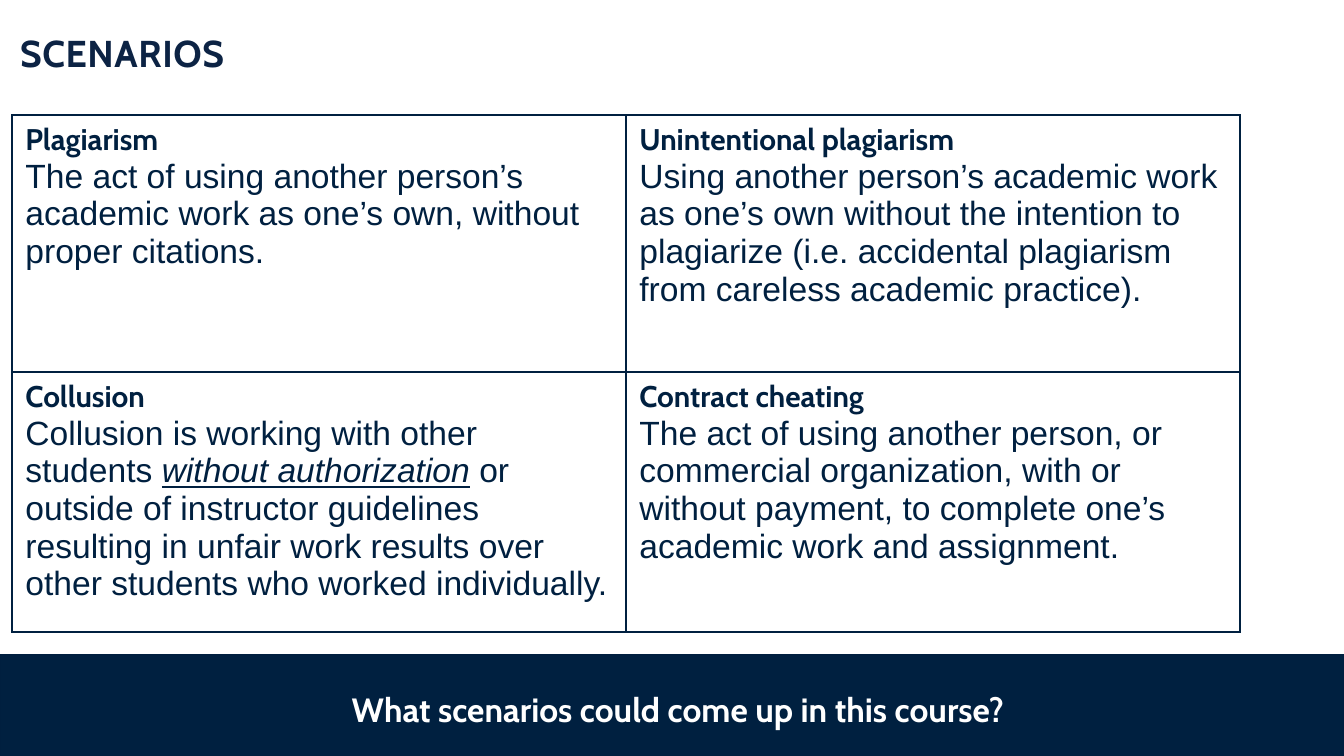
from lxml import etree
from pptx import Presentation, util as u
from pptx.dml.color import RGBColor
from pptx.enum import shapes, text
from pptx.oxml.ns import qn

COLORS = {"navy": "002040", "edge": "001F3F", "title": "0C2344", "white": "FFFFFF"}
SCALE = u.Inches(10) / 1344

SCENARIOS = [
    [
        ("Plagiarism", [("The act of using another person’s academic work as one’s own, without proper citations.", {})]),
        ("Unintentional plagiarism", [("Using another person’s academic work as one’s own without the intention to plagiarize (i.e. accidental plagiarism from careless academic practice).", {})]),
    ],
    [
        ("Collusion", [
            ("Collusion is working with other students ", {}),
            ("without authorization", {"italic": True, "underline": True}),
            (" or outside of instructor guidelines resulting in unfair work results over other students who worked individually.", {}),
        ]),
        ("Contract cheating", [("The act of using another person, or commercial organization, with or without payment, to complete one’s academic work and assignment.", {})]),
    ],
]


def px(value):
    """Turn pixels into EMU."""
    return u.Emu(round(value * SCALE))


def rgb(name):
    """Look up a named colour."""
    return RGBColor.from_string(COLORS[name])


def add_text(paragraph, content, *, font="Cabin", size=18, color="navy", bold=False,
             italic=False, underline=False, spacing=None):
    """Append a formatted run to a paragraph."""
    run = paragraph.add_run()
    run.text = content
    run.font.name, run.font.size = font, u.Pt(size)
    run.font.bold, run.font.italic, run.font.underline = bold, italic, underline
    run.font.color.rgb = rgb(color)
    if spacing is not None:
        run.font._element.set("spc", str(spacing))


def add_box(slide, box):
    """Add a wrapping text box and return its text frame."""
    frame = slide.shapes.add_textbox(*map(px, box)).text_frame
    frame.word_wrap = True
    return frame


def add_borders(cell, color, width):
    """Draw a solid line on all four sides of a cell."""
    properties = cell._tc.get_or_add_tcPr()
    for index, side in enumerate(("lnL", "lnR", "lnT", "lnB")):
        line = etree.Element(qn(f"a:{side}"), w=str(u.Pt(width)))
        fill = etree.SubElement(line, qn("a:solidFill"))
        etree.SubElement(fill, qn("a:srgbClr"), val=COLORS[color])
        properties.insert(index, line)


def add_title(slide, box):
    """Place the slide title."""
    frame = add_box(slide, box)
    frame.margin_left = frame.margin_top = frame.margin_right = frame.margin_bottom = 0
    frame.vertical_anchor = text.MSO_ANCHOR.MIDDLE
    add_text(frame.paragraphs[0], "SCENARIOS", size=20, color="title", bold=True, spacing=30)


def add_scenarios(slide, box, row_heights):
    """Place the table with one scenario in each cell."""
    table = slide.shapes.add_table(len(SCENARIOS), len(SCENARIOS[0]), *map(px, box)).table
    table.first_row = table.horz_banding = False
    for row, height, scenarios in zip(table.rows, row_heights, SCENARIOS):
        row.height = px(height)
        for cell, (heading, definition) in zip(row.cells, scenarios):
            cell.fill.background()
            add_borders(cell, "navy", 1)
            add_text(cell.text_frame.paragraphs[0], heading, size=16, bold=True)
            paragraph = cell.text_frame.add_paragraph()
            for content, style in definition:
                add_text(paragraph, content, font="Arial", **style)


def add_footer(slide, box):
    """Place the bottom band and its question."""
    left, top, width, height = box
    band = slide.shapes.add_shape(shapes.MSO_SHAPE.RECTANGLE, *map(px, box))
    band.shadow.inherit = False
    band.fill.solid()
    band.fill.fore_color.rgb = rgb("navy")
    band.line.color.rgb = rgb("edge")
    band.line.width = u.Pt(0.75)
    paragraph = add_box(slide, (left + 64, top + 15, width - 116, height + 72)).paragraphs[0]
    paragraph.alignment = text.PP_ALIGN.CENTER
    paragraph.line_spacing = 1.3
    add_text(paragraph, "What scenarios could come up in this course?", color="white", bold=True)


def main():
    """Build and save the slide."""
    presentation = Presentation()
    presentation.slide_width, presentation.slide_height = px(1344), px(756)
    slide = presentation.slides.add_slide(presentation.slide_layouts[6])
    add_scenarios(slide, (12, 115, 1228, 517), (257, 260))
    add_footer(slide, (0, 655, 1344, 101))
    add_title(slide, (20, 7, 1152, 91))
    presentation.save("out.pptx")


if __name__ == "__main__":
    main()
